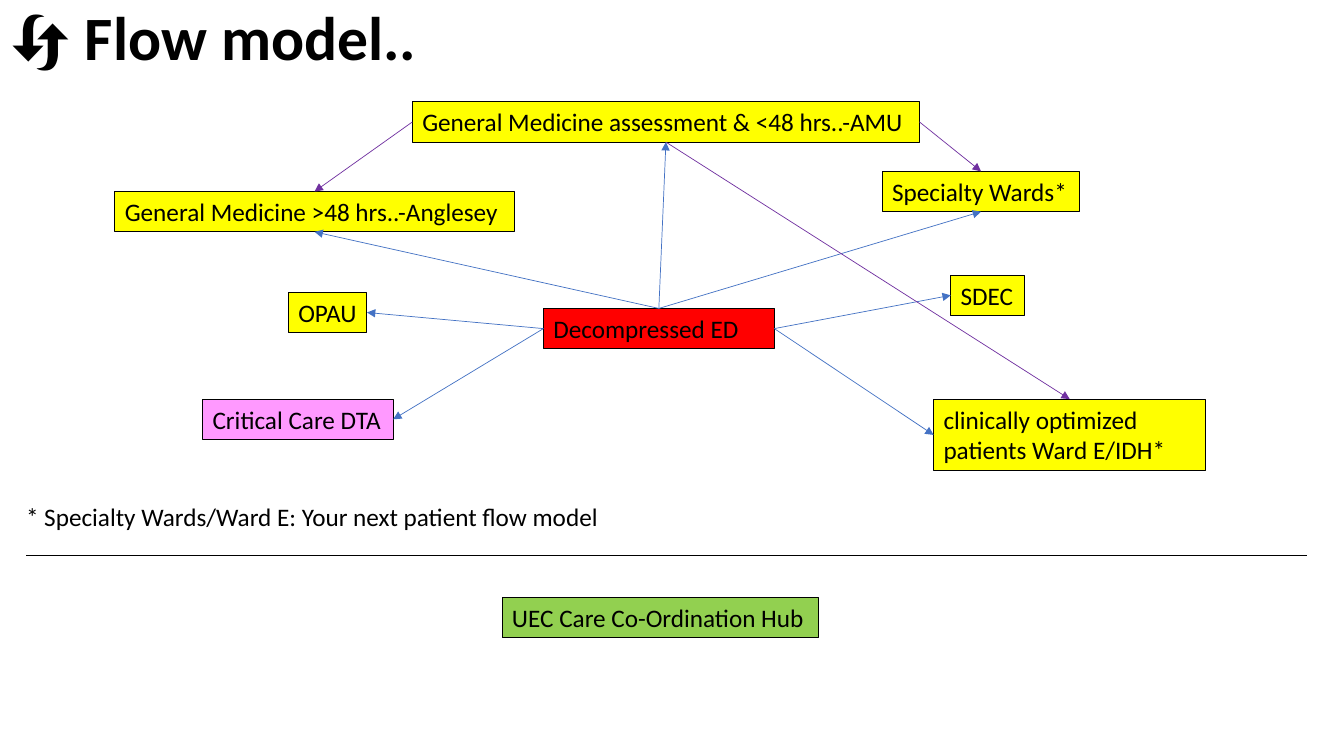
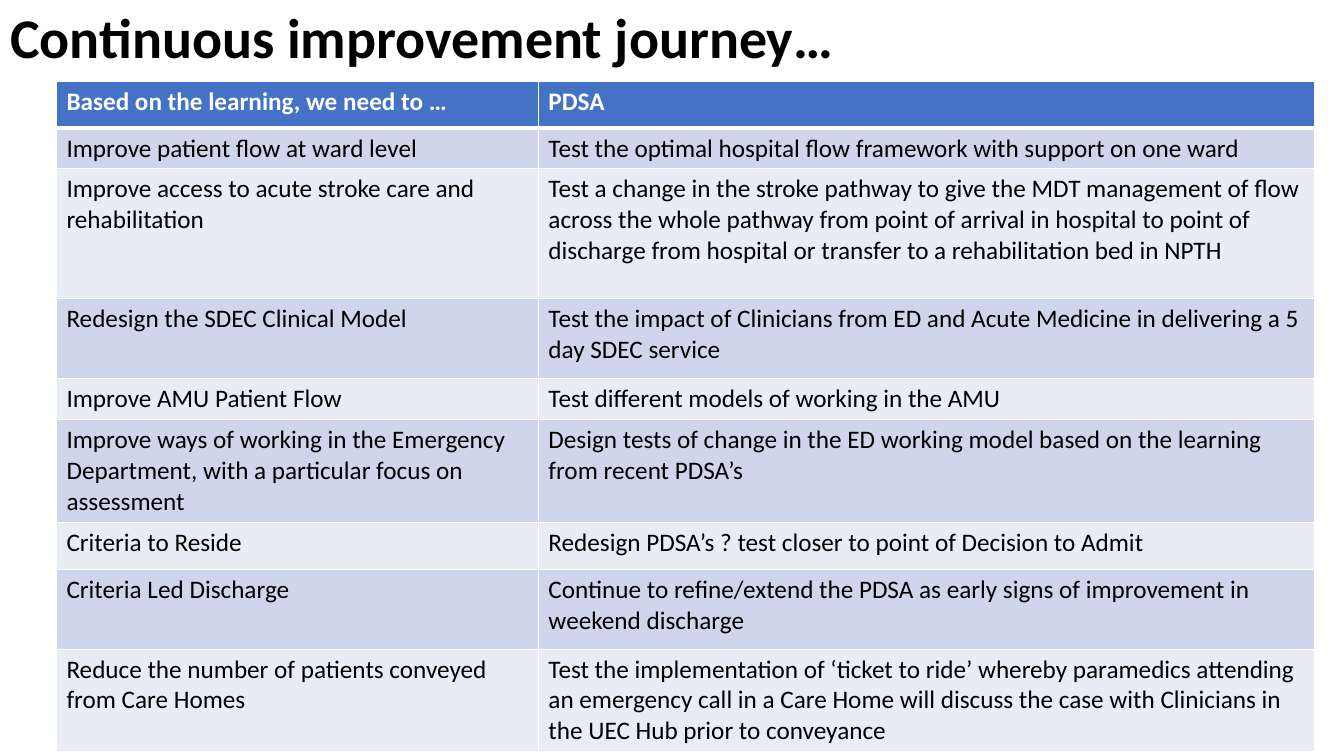
from dataclasses import dataclass

from pptx import Presentation
from pptx.dml.color import RGBColor
from pptx.enum.shapes import MSO_CONNECTOR, MSO_SHAPE
from pptx.enum.text import MSO_ANCHOR, MSO_AUTO_SIZE, PP_ALIGN
from pptx.oxml.ns import qn
from pptx.util import Inches, Pt
from lxml import etree

RECT = MSO_SHAPE.RECTANGLE
STRAIGHT = MSO_CONNECTOR.STRAIGHT
LEFT = PP_ALIGN.LEFT
TOP_ANCHOR, MIDDLE = MSO_ANCHOR.TOP, MSO_ANCHOR.MIDDLE
NO_FIT, GROW = MSO_AUTO_SIZE.NONE, MSO_AUTO_SIZE.SHAPE_TO_FIT_TEXT
TOP, LEFT_SIDE, BOTTOM, RIGHT_SIDE = range(4)  # connection sites


@dataclass(frozen=True)
class Theme:
    font: str = "Calibri"
    body: int = 18
    title: int = 40
    big_title: int = 44
    black: str = "000000"
    white: str = "FFFFFF"
    red: str = "FF0000"
    yellow: str = "FFFF00"
    pink: str = "FF99FF"
    green: str = "92D050"
    blue: str = "4472C4"
    purple: str = "7030A0"
    bands: tuple[str, str] = ("CFD5EA", "E9EBF5")


THEME = Theme()


@dataclass(frozen=True)
class Box:
    key: str
    text: str
    x: float
    y: float
    w: float
    fill: str = THEME.yellow
    h: float = 0.4
    wrap: bool = False


@dataclass(frozen=True)
class Arrow:
    start: str
    start_site: int
    end: str
    end_site: int
    color: str = THEME.blue


@dataclass(frozen=True)
class Row:
    need: str
    test: str
    height: float


BOXES = [
    Box("ed", "Decompressed ED", 5.39, 3.06, 2.29, THEME.red, wrap=True),
    Box("opau", "OPAU", 2.86, 2.9, 0.78),
    Box("long_stay", "General Medicine >48 hrs..-Anglesey", 1.14, 1.9, 3.96),
    Box("amu", "General Medicine assessment & <48 hrs..-AMU", 4.09, 1.01, 5.03),
    Box("critical", "Critical Care DTA", 2.01, 3.96, 1.89, THEME.pink),
    Box("optimized", "clinically optimized patients Ward E/IDH*", 9.26, 3.96, 2.7,
        h=0.71, wrap=True),
    Box("sdec", "SDEC", 9.43, 2.73, 0.73),
    Box("specialty", "Specialty Wards*", 8.75, 1.7, 1.96),
    Box("hub", "UEC Care Co-Ordination Hub", 4.98, 5.93, 3.14, THEME.green, wrap=True),
]

ARROWS = [
    Arrow("ed", TOP, "amu", BOTTOM),
    Arrow("ed", TOP, "long_stay", BOTTOM),
    Arrow("ed", TOP, "specialty", BOTTOM),
    Arrow("ed", RIGHT_SIDE, "sdec", LEFT_SIDE),
    Arrow("ed", LEFT_SIDE, "opau", RIGHT_SIDE),
    Arrow("ed", LEFT_SIDE, "critical", RIGHT_SIDE),
    Arrow("ed", RIGHT_SIDE, "optimized", LEFT_SIDE),
    Arrow("amu", RIGHT_SIDE, "specialty", TOP, THEME.purple),
    Arrow("amu", LEFT_SIDE, "long_stay", TOP, THEME.purple),
    Arrow("amu", BOTTOM, "optimized", TOP, THEME.purple),
]

ROWS = [
    Row("Based on the learning, we need to …", "PDSA", 0.46),
    Row("Improve patient flow at ward level",
        "Test the optimal hospital flow framework with support on one ward", 0.4),
    Row("Improve access to acute stroke care and rehabilitation",
        "Test a change in the stroke pathway to give the MDT management of flow "
        "across the whole pathway from point of arrival in hospital to point of "
        "discharge from hospital or transfer to a rehabilitation bed in NPTH", 1.29),
    Row("Redesign the SDEC Clinical Model",
        "Test the impact of Clinicians from ED and Acute Medicine in delivering "
        "a 5 day SDEC service", 0.79),
    Row("Improve AMU Patient Flow", "Test different models of working in the AMU", 0.41),
    Row("Improve ways of working in the Emergency Department, with a particular "
        "focus on assessment",
        "Design tests of change in the ED working model based on the learning "
        "from recent PDSA’s", 0.99),
    Row("Criteria to Reside",
        "Redesign PDSA’s ? test closer to point of Decision to Admit", 0.47),
    Row("Criteria Led Discharge",
        "Continue to refine/extend the PDSA as early signs of improvement in "
        "weekend discharge", 0.79),
    Row("Reduce the number of patients conveyed from Care Homes",
        "Test the implementation of ‘ticket to ride’ whereby paramedics attending "
        "an emergency call in a Care Home will discuss the case with Clinicians in "
        "the UEC Hub prior to conveyance", 0.79),
]
COLUMN_WIDTHS = (4.78, 7.7)


def rgb(color: str) -> RGBColor:
    return RGBColor.from_string(color)


def add_run(p, text: str, size: int = THEME.body, color: str = THEME.black,
            bold: bool = False) -> None:
    r = p.add_run()
    r.text = text
    r.font.name = THEME.font
    r.font.size = Pt(size)
    r.font.bold = bold
    r.font.color.rgb = rgb(color)


def add_title_slide(prs, runs: list[tuple[str, bool]], size: int, width: float):
    """Add a title-only slide; each title run is (text, bold)."""
    s = prs.slides.add_slide(prs.slide_layouts[5])
    sp = s.shapes.title
    sp.left, sp.top, sp.width, sp.height = Inches(0), Inches(0), Inches(width), Inches(0.8)
    tf = sp.text_frame
    tf.word_wrap = True
    tf.auto_size = NO_FIT
    tf.vertical_anchor = MIDDLE
    p = tf.paragraphs[0]
    p.alignment = LEFT
    p.line_spacing = 0.9
    for text, bold in runs:
        add_run(p, text, size, bold=bold)
    return s


def fill_text(sp, text: str, wrap: bool) -> None:
    tf = sp.text_frame
    tf.word_wrap = wrap
    tf.auto_size = GROW
    tf.vertical_anchor = TOP_ANCHOR
    p = tf.paragraphs[0]
    p.alignment = LEFT
    add_run(p, text)


def add_box(s, box: Box):
    sp = s.shapes.add_shape(RECT, Inches(box.x), Inches(box.y), Inches(box.w), Inches(box.h))
    sp.shadow.inherit = False
    sp.fill.solid()
    sp.fill.fore_color.rgb = rgb(box.fill)
    sp.line.color.rgb = rgb(THEME.black)
    sp.line.width = Pt(0.75)
    fill_text(sp, box.text, box.wrap)
    return sp


def add_line(s, x1: float, y1: float, x2: float, y2: float, color: str, width: float):
    line = s.shapes.add_connector(STRAIGHT, Inches(x1), Inches(y1), Inches(x2), Inches(y2))
    line.line.color.rgb = rgb(color)
    line.line.width = Pt(width)
    etree.SubElement(line._element.spPr, qn("a:effectLst"))
    return line


def add_arrow(s, arrow: Arrow, shapes: dict) -> None:
    line = add_line(s, 0, 0, 1, 1, arrow.color, 0.5)
    line.begin_connect(shapes[arrow.start], arrow.start_site)
    line.end_connect(shapes[arrow.end], arrow.end_site)
    ln = line._element.spPr.find(qn("a:ln"))
    etree.SubElement(ln, qn("a:tailEnd"), type="triangle")


def set_borders(cell, color: str, bottom: float) -> None:
    tc_pr = cell._tc.get_or_add_tcPr()
    for i, (side, width) in enumerate((("L", 1), ("R", 1), ("T", 1), ("B", bottom))):
        ln = etree.Element(qn(f"a:ln{side}"), w=str(Pt(width)))
        fill = etree.SubElement(ln, qn("a:solidFill"))
        etree.SubElement(fill, qn("a:srgbClr"), val=color)
        tc_pr.insert(i, ln)


def add_plan_table(s, rows: list[Row], x: float, y: float) -> None:
    height = sum(row.height for row in rows)
    table = s.shapes.add_table(len(rows), len(COLUMN_WIDTHS), Inches(x), Inches(y),
                               Inches(sum(COLUMN_WIDTHS)), Inches(height)).table
    table.horz_banding = False
    for column, width in zip(table.columns, COLUMN_WIDTHS):
        column.width = Inches(width)
    for i, row in enumerate(rows):
        header = i == 0
        table.rows[i].height = Inches(row.height)
        for j, text in enumerate((row.need, row.test)):
            cell = table.cell(i, j)
            cell.fill.solid()
            cell.fill.fore_color.rgb = rgb(THEME.blue if header else THEME.bands[(i - 1) % 2])
            # The header has a heavier rule, shared with the row under it
            set_borders(cell, THEME.white, 3 if header else 1)
            add_run(cell.text_frame.paragraphs[0], text,
                    color=THEME.white if header else THEME.black, bold=header)


def build_flow_model(prs) -> None:
    s = add_title_slide(prs, [("🔄 ", False), ("Flow model..", True)], THEME.big_title, 6.86)
    shapes = {box.key: add_box(s, box) for box in BOXES}
    for arrow in ARROWS:
        add_arrow(s, arrow, shapes)
    # Footnote and divider
    note = s.shapes.add_textbox(Inches(0.16), Inches(4.92), Inches(6.13), Inches(0.4))
    fill_text(note, "* Specialty Wards/Ward E: Your next patient flow model", True)
    add_line(s, 0.26, 5.51, 12.96, 5.51, THEME.black, 1)


def build_improvement_journey(prs) -> None:
    s = add_title_slide(prs, [("Continuous improvement journey…", True)], THEME.title, 13.33)
    add_plan_table(s, ROWS, 0.56, 0.81)


def main() -> None:
    prs = Presentation()
    prs.slide_width, prs.slide_height = Inches(13.33), Inches(7.5)
    build_flow_model(prs)
    build_improvement_journey(prs)
    prs.save("out.pptx")


if __name__ == "__main__":
    main()
